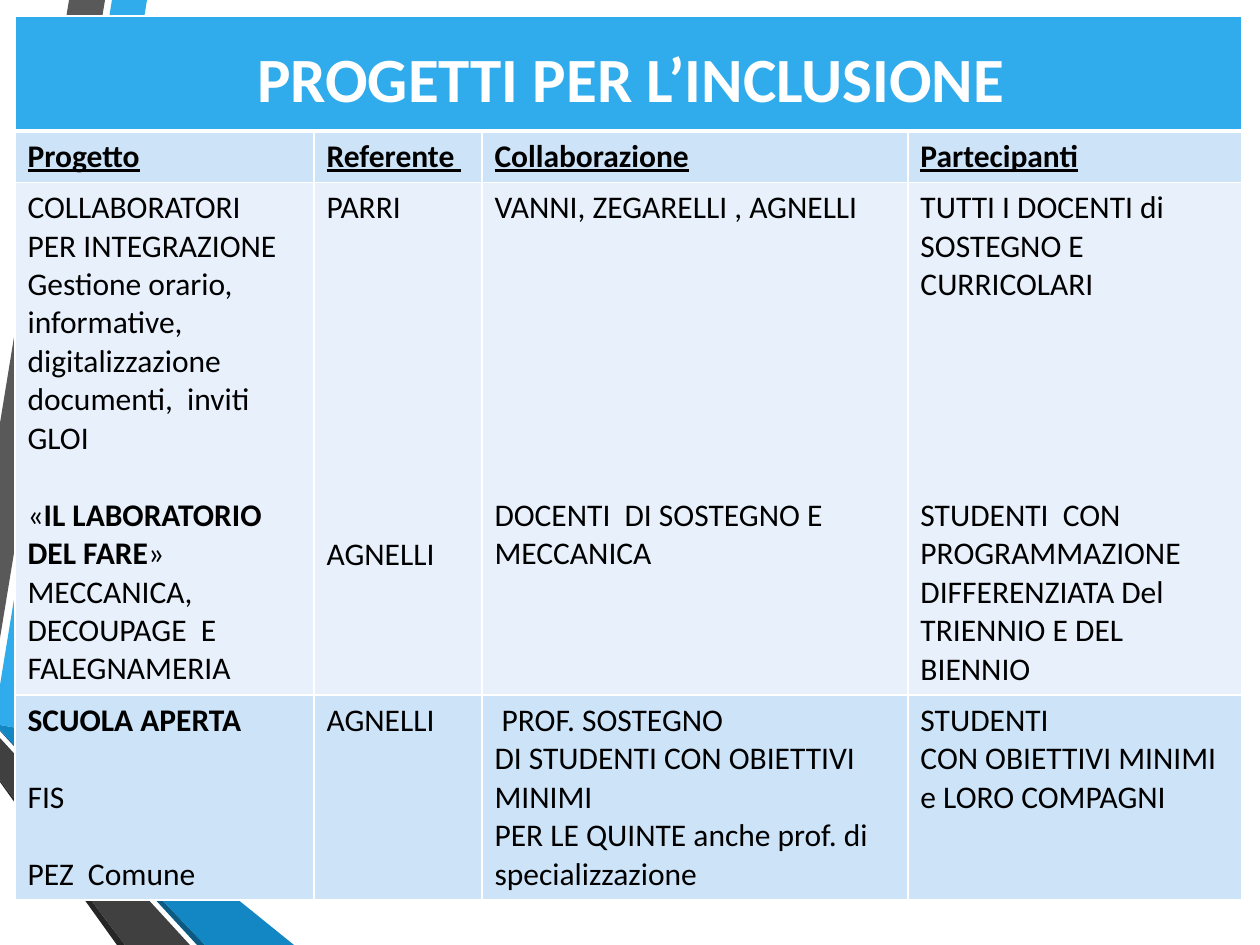
from lxml import etree
from pptx import Presentation
from pptx import util as u
from pptx.dml.color import RGBColor
from pptx.enum import text
from pptx.oxml import ns

PX = 914400 / 126
LINE = 22
WHITE, BLACK, BLUE = "FFFFFF", "000000", "30ACEC"
PALE, LIGHT = "CDE3F8", "E8F1FB"

BANDS = [
    (BLUE, [(0, 685), (0, 725), (28, 730), (147, 0), (112, 0)]),
    ("595959", [(105, 0), (69, 0), (0, 423), (0, 638)]),
    ("262626", [(0, 780), (0, 782), (117, 945), (125, 945)]),
    ("0C5A82", [(0, 730), (0, 731), (197, 945), (205, 945)]),
    ("1287C3", [(0, 730), (205, 945), (294, 945), (28, 730), (0, 725)]),
    ("404040", [(0, 780), (125, 945), (190, 945), (0, 738)]),
]
COLS = [299, 168, 426, 334]
ROWS = [112, 50, 498, 199]
HEADS = ["Progetto", "Referente ", "Collaborazione", "Partecipanti"]

# Each paragraph is (empty lines above, text); asterisks enclose bold words.
LABS = [
    [(0, "COLLABORATORI"), (0, "PER INTEGRAZIONE"),
     (0, "Gestione orario, informative, digitalizzazione  documenti,  inviti GLOI"),
     (1, "«*IL LABORATORIO DEL FARE*»"),
     (0, "MECCANICA, DECOUPAGE  E FALEGNAMERIA")],
    [(0, "PARRI"), (8, "AGNELLI")],
    [(0, "VANNI, ZEGARELLI , AGNELLI"), (7, "DOCENTI  DI SOSTEGNO E"),
     (0, "MECCANICA")],
    [(0, "TUTTI I DOCENTI di SOSTEGNO E CURRICOLARI"),
     (5, "STUDENTI  CON PROGRAMMAZIONE DIFFERENZIATA Del TRIENNIO E DEL BIENNIO")],
]
OPEN = [
    [(0, "*SCUOLA APERTA*"), (1, "FIS"), (1, "PEZ  Comune")],
    [(0, "AGNELLI")],
    [(0, " PROF. SOSTEGNO"), (0, "DI STUDENTI CON OBIETTIVI MINIMI"),
     (0, "PER LE QUINTE anche prof. di specializzazione")],
    [(0, "STUDENTI"), (0, "CON OBIETTIVI MINIMI e LORO COMPAGNI")],
]


def px(n):
    return u.Emu(round(n * PX))


def tint(code):
    return RGBColor.from_string(code)


def paint(fill, code):
    fill.solid()
    fill.fore_color.rgb = tint(code)


def write(para, words, size=18, color=BLACK, bold=False, under=False):
    run = para.add_run()
    run.text = words
    font = run.font
    font.name, font.size = "Calibri", u.Pt(size)
    font.bold, font.underline = bold, under
    font.color.rgb = tint(color)


def band(slide, code, points):
    build = slide.shapes.build_freeform(*points[0], scale=PX)
    build.add_line_segments(points[1:], close=True)
    shape = build.convert_to_shape()
    shape.shadow.inherit = False
    paint(shape.fill, code)
    shape.line.fill.background()


def style(cell, code, base=1):
    props = cell._tc.get_or_add_tcPr()
    for side in "LRTB":
        width = base if side == "B" else 1
        line = etree.SubElement(props, ns.qn(f"a:ln{side}"), w=str(u.Pt(width)))
        fill = etree.SubElement(line, ns.qn("a:solidFill"))
        etree.SubElement(fill, ns.qn("a:srgbClr"), val=WHITE)
    paint(cell.fill, code)


def body(cell, paras):
    frame = cell.text_frame
    for i, (gap, words) in enumerate(paras):
        para = frame.add_paragraph() if i else frame.paragraphs[0]
        para.space_before = u.Pt(gap * LINE)
        for j, part in enumerate(words.split("*")):
            if part:
                write(para, part, bold=j % 2 == 1)


def title(table):
    cell = table.cell(0, 0)
    cell.merge(table.cell(0, len(COLS) - 1))
    cell.vertical_anchor = text.MSO_ANCHOR.MIDDLE
    para = cell.text_frame.paragraphs[0]
    para.alignment = text.PP_ALIGN.CENTER
    write(para, " ", size=48, color=WHITE, bold=True)
    write(para, "PROGETTI PER L’INCLUSIONE ", size=36, color=WHITE, bold=True)


def grid(slide):
    frame = slide.shapes.add_table(len(ROWS), len(COLS), px(15), px(16),
                                   px(sum(COLS)), px(sum(ROWS)))
    table = frame.table
    for col, width in zip(table.columns, COLS):
        col.width = px(width)
    for row, height, code in zip(table.rows, ROWS, [BLUE, PALE, LIGHT, PALE]):
        row.height = px(height)
        for cell in row.cells:
            style(cell, code, base=3 if code == BLUE else 1)
    title(table)
    for i, head in enumerate(HEADS):
        para = table.cell(1, i).text_frame.paragraphs[0]
        write(para, head, bold=True, under=True)
        body(table.cell(2, i), LABS[i])
        body(table.cell(3, i), OPEN[i])


def main():
    deck = Presentation()
    deck.slide_width, deck.slide_height = px(1260), px(945)
    slide = deck.slides.add_slide(deck.slide_layouts[6])
    for code, points in BANDS:
        band(slide, code, points)
    grid(slide)
    deck.save("out.pptx")


if __name__ == "__main__":
    main()
